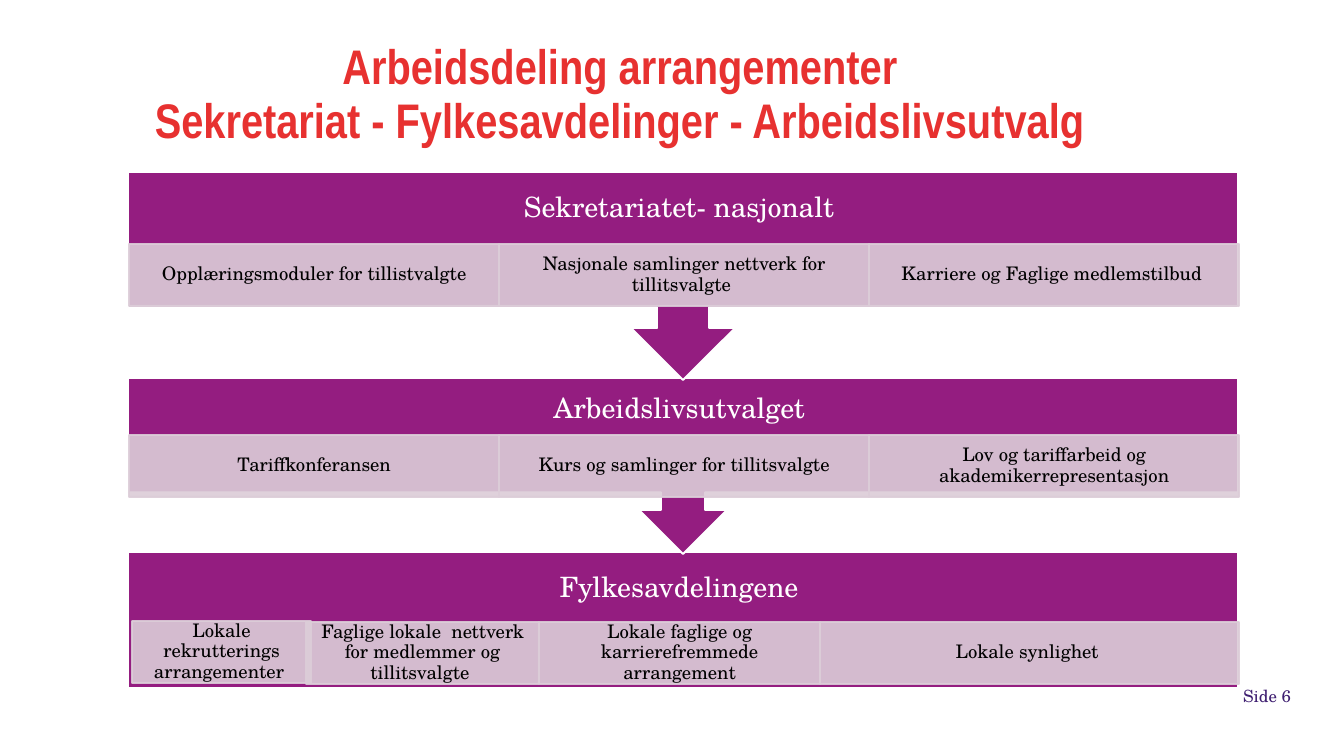
from pptx import Presentation
from pptx.dml.color import RGBColor
from pptx.enum.shapes import MSO_SHAPE as Shape
from pptx.enum.text import MSO_ANCHOR as Anchor, PP_ALIGN as Align
from pptx.oxml.ns import qn
from pptx.util import Emu, Pt
from lxml.etree import SubElement

PX = 914400 / 134.4
SERIF = "TeX Gyre Schola"
PURPLE, LILAC, WHITE = "941D80", "DCCDD8", "FFFFFF"
LEFT, WIDTH, CELL_H = 128, 1110, 62

TITLE = {"size": Pt(26), "name": "Arial Narrow", "bold": True}
HEADING = {"size": Pt(15), "name": SERIF}
BODY = {"size": Pt(10), "name": SERIF}
FOOTER = {"size": Pt(9), "name": SERIF}


def px(value):
    return Emu(round(value * PX))


def paint(color_format, color, alpha=None):
    color_format.rgb = RGBColor.from_string(color)
    if alpha:
        for node in color_format._xFill.iter(qn("a:srgbClr")):
            SubElement(node, qn("a:alpha")).set("val", str(alpha * 1000))


def write(shape, text, font, color, margins=(0, 0), align=Align.CENTER,
          anchor=Anchor.MIDDLE, spacing=0.9):
    frame = shape.text_frame
    side, top = (px(m) for m in margins)
    settings = {"word_wrap": True, "vertical_anchor": anchor,
                "margin_left": side, "margin_right": side,
                "margin_top": top, "margin_bottom": top}
    for key, value in settings.items():
        setattr(frame, key, value)
    para = frame.paragraphs[0]
    para.text = text
    para.alignment, para.line_spacing = align, spacing
    for span in para.runs:
        for key, value in font.items():
            setattr(span.font, key, value)
        paint(span.font.color, color)


def add_text(page, box, text, font, color, **layout):
    shape = page.shapes.add_textbox(*map(px, box))
    write(shape, text, font, color, **layout)


def add_block(page, kind, box, fill, line, alpha=None):
    shape = page.shapes.add_shape(kind, *map(px, box))
    shape.shadow.inherit = False
    shape.fill.solid()
    shape.line.width = Pt(1)
    for target, color in ((shape.fill, fill), (shape.line.fill, line)):
        target.solid()
        paint(target.fore_color, color)
        if alpha:
            node = (shape._element.spPr if target is shape.fill
                    else shape._element.spPr.find(qn("a:ln")))
            clr = node.find(qn("a:solidFill")).find(qn("a:srgbClr"))
            SubElement(clr, qn("a:alpha")).set("val", str(alpha * 1000))
    return shape


def add_level(page, box, kind, heading, heading_h, cells):
    """One level: purple block, heading on top, cells as (x, y, width, text)."""
    left, top, width, _ = box
    block = add_block(page, kind, box, PURPLE, WHITE)
    if kind == Shape.UP_ARROW_CALLOUT:
        block.rotation = 180
    add_text(page, (left, top, width, heading_h), heading, HEADING, WHITE,
             margins=(16, 16))
    for x, y, cell_w, text in cells:
        cell = add_block(page, Shape.RECTANGLE,
                         (left + x, top + y, cell_w, CELL_H), LILAC, LILAC, 90)
        write(cell, text, BODY, "000000", margins=(11, 1))


def thirds(y, texts):
    return [(1 + 370 * i, y, 370, text) for i, text in enumerate(texts)]


def main():
    deck = Presentation()
    deck.slide_width, deck.slide_height = px(1344), px(756)
    page = deck.slides.add_slide(deck.slide_layouts[6])

    # Title
    add_text(page, (71, 40, 1110, 117),
             "Arbeidsdeling arrangementer \v"
             "Sekretariat - Fylkesavdelinger - Arbeidslivsutvalg ",
             TITLE, "E73130", anchor=Anchor.TOP, spacing=Pt(29))

    # Levels, lowest first so that each arrow overlaps the level below
    add_level(page, (LEFT, 552, WIDTH, 136), Shape.RECTANGLE,
              "Fylkesavdelingene ", 73, [
                  (4, 69, 179, "Lokale rekrutterings arrangementer "),
                  (178, 70, 233, "Faglige lokale  nettverk for medlemmer og tillitsvalgte "),
                  (411, 70, 281, "Lokale faglige og karrierefremmede arrangement"),
                  (692, 70, 419, "Lokale synlighet ")])
    add_level(page, (LEFT, 378, WIDTH, 176), Shape.UP_ARROW_CALLOUT,
              "Arbeidslivsutvalget ", 62, thirds(57, [
                  "Tariffkonferansen",
                  "Kurs og samlinger for tillitsvalgte",
                  "Lov og tariffarbeid og akademikerrepresentasjon"]))
    add_level(page, (LEFT, 172, WIDTH, 208), Shape.UP_ARROW_CALLOUT,
              "Sekretariatet- nasjonalt ", 73, thirds(72, [
                  "Opplæringsmoduler for tillistvalgte",
                  "Nasjonale samlinger nettverk for tillitsvalgte ",
                  "Karriere og Faglige medlemstilbud "]))

    # Page number
    add_text(page, (989, 688, 302, 15), "Side 6", FOOTER, "3F1F71",
             align=Align.RIGHT, spacing=1.0)

    deck.save("out.pptx")


if __name__ == "__main__":
    main()
